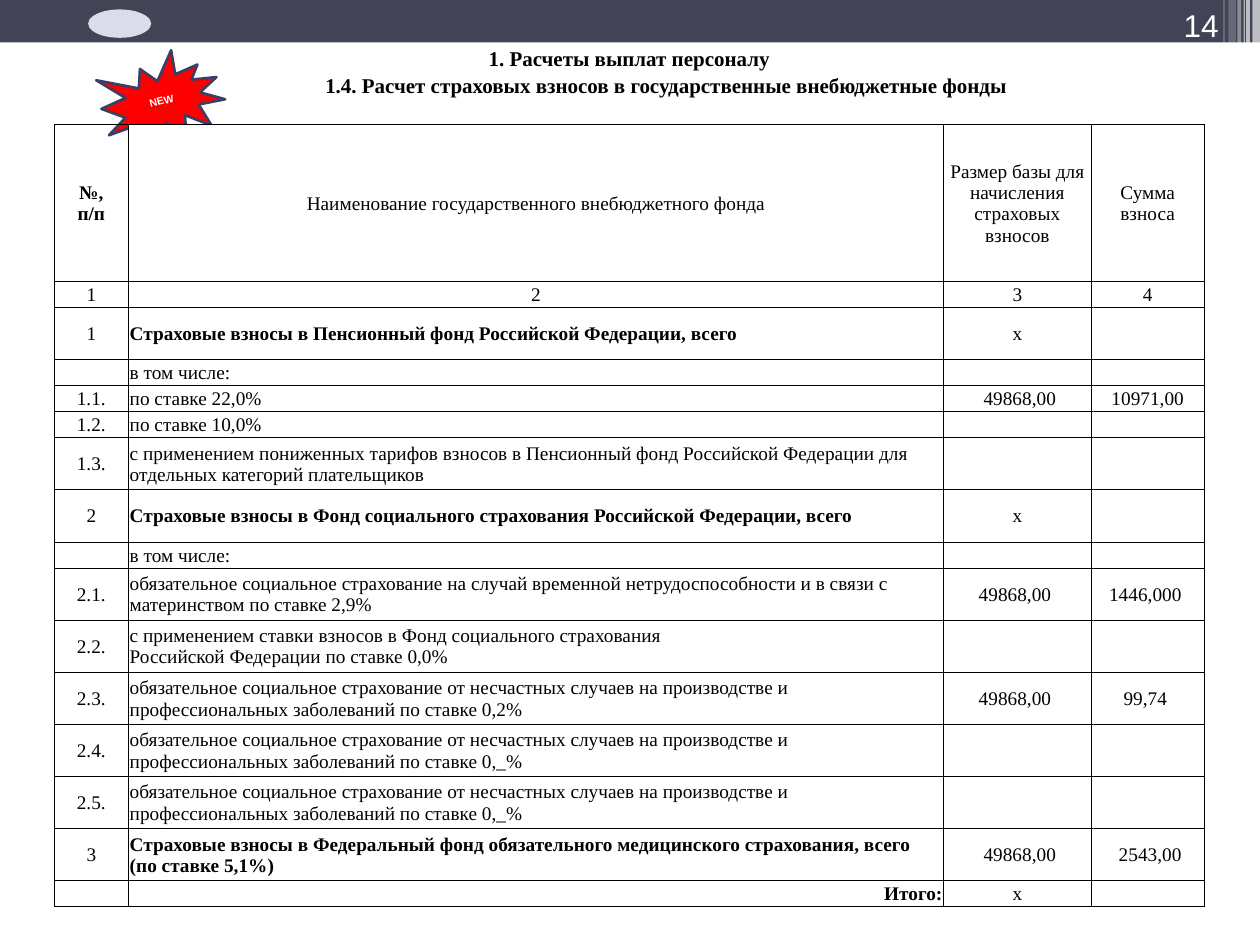
from dataclasses import dataclass
from typing import NamedTuple

from lxml import etree
from pptx import Presentation
from pptx.dml.color import RGBColor
from pptx.enum.shapes import MSO_SHAPE
from pptx.enum.text import MSO_ANCHOR, PP_ALIGN
from pptx.oxml.ns import qn
from pptx.util import Inches, Pt

RECT, OVAL, SEAL = MSO_SHAPE.RECTANGLE, MSO_SHAPE.OVAL, MSO_SHAPE.EXPLOSION1
LEFT, MID, RIGHT = PP_ALIGN.LEFT, PP_ALIGN.CENTER, PP_ALIGN.RIGHT
CENTER, LOW = MSO_ANCHOR.MIDDLE, MSO_ANCHOR.BOTTOM
WIDE, HIGH = Inches(10), Inches(7.5)
PLAIN = "{2D5ABB26-0587-4C30-8999-92F81FD0307C}"


@dataclass(frozen=True)
class Theme:
    bar: str = "424456"
    mark: str = "DBDBE9"
    white: str = "FFFFFF"
    black: str = "000000"
    red: str = "FF0000"
    edge: str = "3D3E66"
    serif: str = "Times New Roman"
    sans: str = "Arial"
    page: float = 18
    title: float = 12
    body: float = 11
    badge: float = 6


class Box(NamedTuple):
    x: float
    y: float
    w: float
    h: float


class Stripe(NamedTuple):
    x: float
    w: float
    h: float
    alpha: int


class Style(NamedTuple):
    font: str
    size: float
    tint: str
    bold: bool = False
    align: PP_ALIGN = LEFT


class Row(NamedTuple):
    lines: int
    num: str
    name: str
    base: str = ""
    total: str = ""
    bold: bool = False
    align: PP_ALIGN = LEFT


T = Theme()
PAGE = Box(0.894, 0, 0.083, 0.053)
BADGE = Box(0.081, 0.057, 0.097, 0.105)
GRID = Box(0.043, 0.048, 0.913, 0.911)
COLS = (0.59, 6.47, 1.17, 0.9)
HEAD = 6
STRIPES = (
    Stripe(0.994, 0.006, 0.09, 65),
    Stripe(0.989, 0.003, 0.09, 65),
    Stripe(0.987, 0.001, 0.09, 60),
    Stripe(0.982, 0.003, 0.09, 40),
    Stripe(0.975, 0.006, 0.085, 20),
    Stripe(0.971, 0.001, 0.085, 30),
)
HARM = ("обязательное социальное страхование от несчастных случаев на производстве "
        "и профессиональных заболеваний по ставке 0,")
TITLES = (
    "1. Расчеты выплат персоналу",
    "1.4. Расчет страховых взносов в государственные внебюджетные фонды",
)
ROWS = (
    Row(HEAD, "№,\nп/п", "Наименование государственного внебюджетного фонда",
        "Размер базы для начисления страховых взносов", "Сумма взноса", align=MID),
    Row(1, "1", "2", "3", "4", align=MID),
    Row(2, "1", "Страховые взносы в Пенсионный фонд Российской Федерации, всего",
        "x", bold=True),
    Row(1, "", "в том числе:"),
    Row(1, "1.1.", "по ставке 22,0%", " 49868,00", "10971,00"),
    Row(1, "1.2.", "по ставке 10,0%"),
    Row(2, "1.3.", "с применением пониженных тарифов взносов в Пенсионный фонд "
        "Российской Федерации для отдельных категорий плательщиков"),
    Row(2, "2", "Страховые взносы в Фонд социального страхования "
        "Российской Федерации, всего", "x", bold=True),
    Row(1, "", "в том числе:"),
    Row(2, "2.1.", "обязательное социальное страхование на случай временной "
        "нетрудоспособности и в связи с материнством по ставке 2,9%",
        "49868,00 ", "1446,000 "),
    Row(2, "2.2.", "с применением ставки взносов в Фонд социального страхования\n"
        "Российской Федерации по ставке 0,0%"),
    Row(2, "2.3.", HARM + "2%", "49868,00 ", "99,74 "),
    Row(2, "2.4.", HARM + "_%"),
    Row(2, "2.5.", HARM + "_%"),
    Row(2, "3", "Страховые взносы в Федеральный фонд обязательного медицинского "
        "страхования, всего (по ставке 5,1%)", " 49868,00", " 2543,00", bold=True),
    Row(1, "", "Итого:", "x", bold=True, align=RIGHT),
)


def place(box: Box) -> tuple[int, int, int, int]:
    return (int(box.x * WIDE), int(box.y * HIGH),
            int(box.w * WIDE), int(box.h * HIGH))


def write(frame, text: str, style: Style) -> None:
    para = frame.paragraphs[0]
    para.alignment = style.align
    if not text:
        etree.SubElement(para._p, qn("a:endParaRPr"), sz=str(int(style.size * 100)))
        return
    for i, line in enumerate(text.split("\n")):
        if i:
            para.add_line_break()
        run = para.add_run()
        run.text = line
        run.font.name = style.font
        run.font.size = Pt(style.size)
        run.font.bold = style.bold
        run.font.color.rgb = RGBColor.from_string(style.tint)


def draw(slide, kind: MSO_SHAPE, box: Box, tint: str, alpha: int = 100):
    shape = slide.shapes.add_shape(kind, *place(box))
    shape.shadow.inherit = False
    shape.fill.solid()
    shape.fill.fore_color.rgb = RGBColor.from_string(tint)
    shape.line.fill.background()
    if alpha < 100:
        color = shape._element.spPr.find(".//" + qn("a:srgbClr"))
        etree.SubElement(color, qn("a:alpha"), val=str(alpha * 1000))
    return shape


def rule(cell, sides: str) -> None:
    props = cell._tc.get_or_add_tcPr()
    for i, side in enumerate(sides):
        line = etree.Element(qn(f"a:ln{side}"), w=str(Pt(0.5)))
        fill = etree.SubElement(line, qn("a:solidFill"))
        etree.SubElement(fill, qn("a:srgbClr"), val=T.black)
        props.insert(i, line)


def fit(cell, anchor: MSO_ANCHOR = CENTER) -> None:
    cell.margin_left = cell.margin_right = cell.margin_top = Inches(0.01)
    cell.margin_bottom = 0
    cell.vertical_anchor = anchor


def fill_row(table, index: int, row: Row) -> None:
    head = row.lines == HEAD
    texts = (row.num, row.name, row.base, row.total)
    bolds = (head, row.bold, False, False)
    aligns = (MID, row.align, MID, MID)
    for col, (text, bold, align) in enumerate(zip(texts, bolds, aligns)):
        cell = table.cell(index, col)
        fit(cell)
        write(cell.text_frame, text, Style(T.serif, T.body, T.black, bold, align))
        if not (head and col == 0):
            cell.fill.solid()
            cell.fill.fore_color.rgb = RGBColor.from_string(T.white)
        rule(cell, "LRTB")


def add_grid(slide) -> None:
    lead = len(TITLES) + 1
    spans = [1] * lead + [row.lines for row in ROWS]
    frame = slide.shapes.add_table(len(spans), len(COLS), *place(GRID))
    table = frame.table
    table.first_row = table.horz_banding = False
    table._tbl.tblPr.find(qn("a:tableStyleId")).text = PLAIN
    for col, width in zip(table.columns, COLS):
        col.width = int(GRID.w * WIDE * width / sum(COLS))
    for line, span in zip(table.rows, spans):
        line.height = int(GRID.h * HIGH * span / sum(spans))
    for r in range(lead):
        for c in range(len(COLS)):
            cell = table.cell(r, c)
            fit(cell, LOW if r else CENTER)
            text = TITLES[r] if r < len(TITLES) and c == r else ""
            write(cell.text_frame, text, Style(T.serif, T.title, T.black, True, MID))
            if r == lead - 1:
                rule(cell, "B")
    for i in range(len(TITLES)):
        table.cell(i, i).merge(table.cell(i, len(COLS) - 1))
    for i, row in enumerate(ROWS, lead):
        fill_row(table, i, row)


def main() -> None:
    deck = Presentation()
    deck.slide_width, deck.slide_height = WIDE, HIGH
    slide = deck.slides.add_slide(deck.slide_layouts[6])
    draw(slide, RECT, Box(0, 0, 1, 0.045), T.bar)
    for s in STRIPES:
        draw(slide, RECT, Box(s.x, 0, s.w, s.h), T.white, s.alpha)
    draw(slide, OVAL, Box(0.07, 0.01, 0.05, 0.03), T.mark)
    page = slide.shapes.add_textbox(*place(PAGE)).text_frame
    page.word_wrap, page.vertical_anchor = True, LOW
    write(page, "14", Style(T.sans, T.page, T.white, align=RIGHT))
    badge = draw(slide, SEAL, BADGE, T.red)
    badge.rotation = 345.6
    badge.line.color.rgb = RGBColor.from_string(T.edge)
    badge.line.width = Pt(1.5)
    badge.text_frame.vertical_anchor = CENTER
    write(badge.text_frame, "NEW", Style(T.sans, T.badge, T.white, True, MID))
    add_grid(slide)
    deck.save("out.pptx")


if __name__ == "__main__":
    main()
